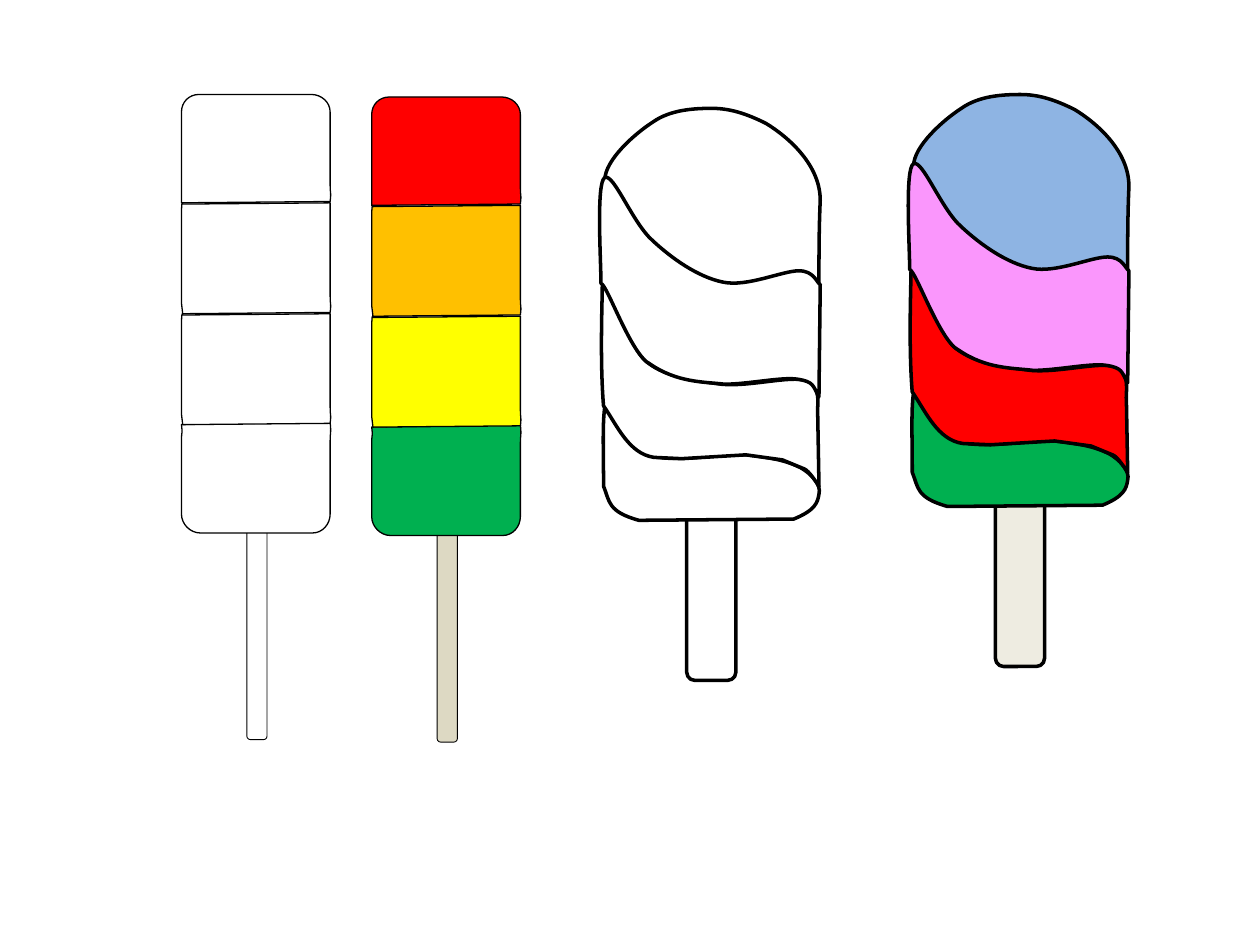
from lxml import etree
from pptx import Presentation
from pptx.dml.color import RGBColor
from pptx.enum.shapes import MSO_SHAPE
from pptx.oxml.ns import qn
from pptx.util import Pt

EMU_PER_PX = 9144  # 100 px to the inch

BLACK = RGBColor(0x00, 0x00, 0x00)
WHITE = RGBColor(0xFF, 0xFF, 0xFF)
RED = RGBColor(0xFF, 0x00, 0x00)
ORANGE = RGBColor(0xFF, 0xC0, 0x00)
YELLOW = RGBColor(0xFF, 0xFF, 0x00)
GREEN = RGBColor(0x00, 0xB0, 0x50)
BLUE = RGBColor(0x8E, 0xB4, 0xE3)
PINK = RGBColor(0xFA, 0x96, 0xFC)
DARK_WOOD = RGBColor(0xDD, 0xD9, 0xC3)
LIGHT_WOOD = RGBColor(0xEE, 0xEC, 0xE1)

# Outlines: a start point, then lines (x, y) and cubic curves (x1, y1, x2, y2, x, y).
BLOCK_TOP = [
    (144, 89), (144, 81, 150, 75, 158, 75), (247, 75),
    (255, 75, 262, 81, 262, 89), (262, 147),
    (262, 155, 263, 151, 262, 160), (144, 161),
    (144, 152, 144, 155, 144, 147)]
BLOCK_MIDDLE = [
    (144, 177), (144, 169, 144, 158, 145, 162), (262, 161),
    (262, 170, 262, 169, 262, 177), (262, 235),
    (262, 243, 263, 240, 262, 248), (145, 249),
    (144, 240, 144, 243, 144, 235)]
BLOCK_BOTTOM = [
    (144, 408), (144, 416, 151, 423, 159, 423), (248, 423),
    (256, 423, 262, 416, 262, 408), (262, 350),
    (262, 342, 263, 345, 262, 335), (144, 337),
    (145, 345, 144, 342, 144, 350)]
BLOCK_HEIGHT = 88

SWIRL_DOME = [
    (565, 86), (579, 86, 592, 90, 608, 98), (626, 109, 651, 131, 651, 159),
    (650, 181, 650, 204, 650, 227), (648, 224, 645, 217, 634, 217),
    (621, 217, 593, 230, 574, 226), (554, 222, 533, 207, 518, 193),
    (502, 179, 480, 159, 480, 143), (480, 127, 504, 106, 518, 97),
    (532, 87, 551, 86, 565, 86)]
SWIRL_UPPER = [
    (650, 315), (645, 306, 646, 303, 633, 301), (621, 299, 594, 305, 575, 305),
    (559, 303, 538, 304, 516, 289), (501, 282, 482, 226, 477, 225),
    (477, 207, 473, 145, 480, 141), (487, 137, 502, 177, 518, 191),
    (533, 205, 554, 220, 574, 224), (593, 228, 621, 215, 634, 215),
    (646, 215, 648, 224, 651, 226)]
SWIRL_LOWER = [
    (650, 386), (650, 386, 642, 373, 638, 372), (621, 365), (592, 361),
    (541, 364), (519, 363), (499, 360, 490, 338, 479, 322),
    (476, 286, 478, 239, 478, 227), (484, 221, 498, 274, 513, 287),
    (529, 300, 552, 302, 573, 305), (595, 307, 627, 298, 640, 302),
    (653, 306, 648, 324, 649, 329)]
SWIRL_BASE = [
    (630, 412), (507, 413), (482, 406, 484, 398, 479, 386),
    (479, 358, 478, 336, 480, 323), (486, 330, 496, 355, 515, 361),
    (533, 368, 572, 360, 592, 361), (612, 363, 625, 366, 635, 371),
    (644, 376, 652, 385, 650, 392), (649, 399, 647, 405, 630, 412)]


def bend(freeform, outline):
    """Turn the freeform's lines into curves where the outline has controls."""
    left = min(segment[-2] for segment in outline)
    top = min(segment[-1] for segment in outline)
    lines = list(freeform.element.iter(qn("a:lnTo")))
    for line, segment in zip(lines, outline[1:]):
        if len(segment) == 2:
            continue
        line.tag = qn("a:cubicBezTo")
        for index, (x, y) in enumerate((segment[:2], segment[2:4])):
            control = etree.Element(qn("a:pt"), x=str(x - left), y=str(y - top))
            line.insert(index, control)


class LollyArtist:
    def __init__(self, slide):
        self.shapes = slide.shapes

    def paint(self, shape, fill, line_width):
        shape.shadow.inherit = False
        shape.fill.solid()
        shape.fill.fore_color.rgb = fill
        shape.line.color.rgb = BLACK
        shape.line.width = Pt(line_width)

    def piece(self, outline, fill, line_width, dx, dy):
        anchors = [(segment[-2] + dx, segment[-1] + dy) for segment in outline]
        builder = self.shapes.build_freeform(*anchors[0], scale=EMU_PER_PX)
        builder.add_line_segments(anchors[1:], close=True)
        freeform = builder.convert_to_shape()
        bend(freeform, outline)
        self.paint(freeform, fill, line_width)

    def stick(self, left, top, width, height, fill, line_width):
        box = [length * EMU_PER_PX for length in (left, top, width, height)]
        shape = self.shapes.add_shape(MSO_SHAPE.ROUNDED_RECTANGLE, *box)
        self.paint(shape, fill, line_width)

    def block_lolly(self, dx, dy, wood, flavours):
        """Draw four stacked blocks, with flavours from top to bottom."""
        first, second, third, fourth = flavours
        self.piece(BLOCK_TOP, first, 0.75, dx, dy)
        self.stick(196 + dx, 414 + dy, 16, 173, wood, 0.5)
        self.piece(BLOCK_MIDDLE, second, 0.75, dx, dy)
        self.piece(BLOCK_BOTTOM, fourth, 0.75, dx, dy)
        self.piece(BLOCK_MIDDLE, third, 0.75, dx, dy + BLOCK_HEIGHT)

    def swirl_lolly(self, dx, dy, wood, flavours):
        """Draw four wavy layers, with flavours from top to bottom."""
        dome, upper, lower, base = flavours
        self.stick(545 + dx, 379 + dy, 39, 161, wood, 2)
        for outline, flavour in ((SWIRL_DOME, dome), (SWIRL_BASE, base),
                                 (SWIRL_LOWER, lower), (SWIRL_UPPER, upper)):
            self.piece(outline, flavour, 2, dx, dy)


def main():
    presentation = Presentation()
    presentation.slide_width = 1000 * EMU_PER_PX
    presentation.slide_height = 750 * EMU_PER_PX
    blank_layout = presentation.slide_layouts[6]
    artist = LollyArtist(presentation.slides.add_slide(blank_layout))

    uncoloured = [WHITE] * 4
    artist.block_lolly(0, 0, WHITE, uncoloured)
    artist.block_lolly(151, 2, DARK_WOOD, [RED, ORANGE, YELLOW, GREEN])
    artist.swirl_lolly(0, 0, WHITE, uncoloured)
    artist.swirl_lolly(245, -11, LIGHT_WOOD, [BLUE, PINK, RED, GREEN])

    presentation.save("out.pptx")


if __name__ == "__main__":
    main()
